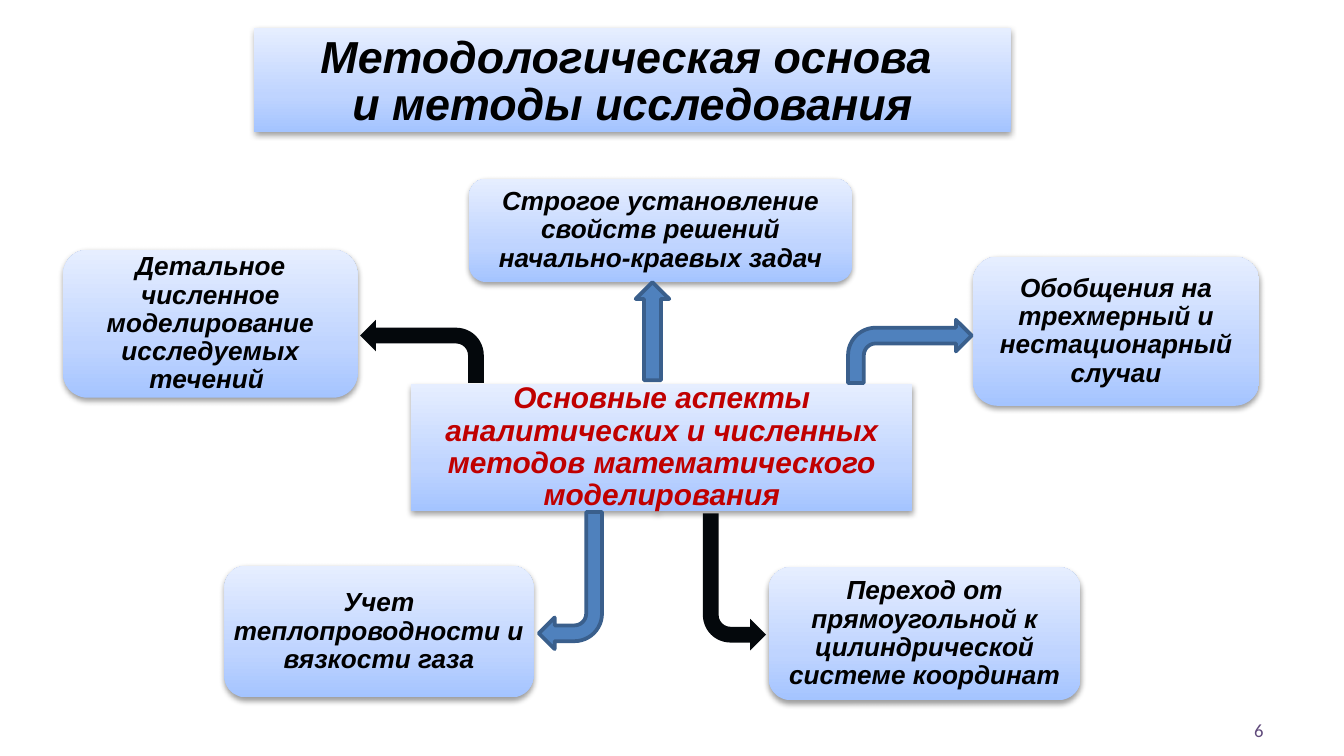
from copy import deepcopy

from lxml import etree
from pptx import Presentation
from pptx.dml.color import RGBColor
from pptx.enum.shapes import MSO_SHAPE
from pptx.enum.text import MSO_ANCHOR, MSO_AUTO_SIZE, PP_ALIGN
from pptx.oxml.ns import qn
from pptx.util import Inches, Pt

RECT, ROUND = MSO_SHAPE.RECTANGLE, MSO_SHAPE.ROUNDED_RECTANGLE
BENT, UP = MSO_SHAPE.BENT_ARROW, MSO_SHAPE.UP_ARROW
CENTER, RIGHT = PP_ALIGN.CENTER, PP_ALIGN.RIGHT
MIDDLE, NO_FIT = MSO_ANCHOR.MIDDLE, MSO_AUTO_SIZE.NONE

COLORS = {
    "low": "A4C4FF", "mid": "BFD4FF", "high": "E6EEFF",
    "text": "000000", "accent": "C00000", "page": "604A7B",
    "blue": "4F81BD", "edge": "3A5F8C", "dark": "04080C",
}
STOPS = [(0, "low"), (0.35, "mid"), (1, "high")]

# Grid: 100 columns by 56.25 rows of square cells; boxes are (col, row, cols, rows)
CELL = 0.1
COLS, ROWS = 100, 56.25
TITLE = (18.9, 2.1, 56.3, 7.7)
HUB = (30.6, 28.6, 37.3, 9.4)
PAGE = (71.7, 52.8, 23.3, 3)

ASPECTS = [
    ("Строгое установление свойств решений начально-краевых задач",
     (34.9, 13.3, 28.5, 7.7)),
    ("Обобщения на трехмерный и нестационарный случаи",
     (72.4, 19.1, 21.3, 11.1)),
    ("Переход от прямоугольной к цилиндрической системе координат",
     (57.2, 42.2, 23.2, 9.9)),
    ("Учет теплопроводности и вязкости газа",
     (16.7, 42.1, 23, 9.8)),
    ("Детальное численное моделирование исследуемых течений ",
     (4.7, 18.6, 21.9, 11)),
]

# Arrows: kind, box measured from the hub's corner, fill, flips
ARROWS = [
    (BENT, (32.5, -4.8, 9.2, 4.7), "blue", ()),
    (UP, (16.7, -7.6, 2.5, 7.3), "blue", ()),
    (BENT, (-3.8, -4.8, 9.2, 4.7), "dark", ("flipH",)),
    (BENT, (21.7, 9.6, 4.7, 10.2), "dark", ("flipV",)),
    (BENT, (9.5, 9.5, 4.7, 10.2), "blue", ("flipH", "flipV")),
]


def rgb(name):
    return RGBColor.from_string(COLORS[name])


def cells(box):
    return [Inches(n * CELL) for n in box]


def glaze(shape):
    """Three-stop gradient with a soft shadow below."""
    fill = shape.fill
    fill.gradient()
    stops = shape._element.spPr.find(".//" + qn("a:gsLst"))
    stops.append(deepcopy(stops[-1]))
    for stop, (pos, name) in zip(fill.gradient_stops, STOPS):
        stop.position = pos
        stop.color.rgb = rgb(name)
    fill.gradient_angle = 90
    shape.line.fill.background()
    shape.shadow.inherit = False
    effects = shape._element.spPr.find(qn("a:effectLst"))
    shade = etree.SubElement(effects, qn("a:outerShdw"), blurRad="40000",
                             dist="20000", dir="5400000", rotWithShape="0")
    tint = etree.SubElement(shade, qn("a:srgbClr"), val="000000")
    etree.SubElement(tint, qn("a:alpha"), val="38000")


def write(shape, lines, size, color="text", inset=0.01, align=CENTER,
          font="Arial", bold=True):
    """Each line is (text, line spacing, points after)."""
    frame = shape.text_frame
    frame.word_wrap = True
    frame.auto_size = NO_FIT
    frame.vertical_anchor = MIDDLE
    frame.margin_left = frame.margin_right = Inches(inset)
    frame.margin_top = frame.margin_bottom = Inches(inset)
    for i, (text, space, after) in enumerate(lines):
        para = frame.add_paragraph() if i else frame.paragraphs[0]
        para.alignment = align
        para.line_spacing = space
        para.space_before = Pt(0)
        para.space_after = Pt(after)
        run = para.add_run()
        run.text = text
        run.font.name = font
        run.font.size = Pt(size)
        run.font.bold = run.font.italic = bold
        run.font.color.rgb = rgb(color)


def add_title(slide, box):
    title = slide.shapes.title
    title.left, title.top, title.width, title.height = cells(box)
    glaze(title)
    write(title, [("Методологическая основа ", 0.9, 8.4),
                  ("и методы исследования", 0.5, 0)], 24, inset=0.02)


def add_card(slide, box, kind, text, size, color="text"):
    card = slide.shapes.add_shape(kind, *cells(box))
    glaze(card)
    write(card, [(text, 0.9, 0)], size, color)


def add_arrows(slide, hub):
    for kind, (x, y, w, h), color, flips in ARROWS:
        box = (hub[0] + x, hub[1] + y, w, h)
        arrow = slide.shapes.add_shape(kind, *cells(box))
        arrow.shadow.inherit = False
        arrow.fill.solid()
        arrow.fill.fore_color.rgb = rgb(color)
        if color == "blue":
            arrow.line.color.rgb = rgb("edge")
            arrow.line.width = Pt(2)
        else:
            arrow.line.fill.background()
        for flip in flips:
            arrow._element.spPr.find(qn("a:xfrm")).set(flip, "1")


def add_page(slide, box):
    page = slide.shapes.add_textbox(*cells(box))
    write(page, [("6", 1, 0)], 10, "page", 0.1, RIGHT, "Calibri", False)


def main():
    deck = Presentation()
    deck.slide_width, deck.slide_height = cells((COLS, ROWS))
    slide = deck.slides.add_slide(deck.slide_layouts[5])

    # Heading and page number
    add_title(slide, TITLE)
    add_page(slide, PAGE)

    # Aspects around the central hub
    for text, box in ASPECTS:
        add_card(slide, box, ROUND, text, 14)
    add_card(slide, HUB, RECT, "Основные аспекты аналитических и численных "
             "методов математического моделирования", 16, "accent")
    add_arrows(slide, HUB)

    deck.save("out.pptx")


if __name__ == "__main__":
    main()
